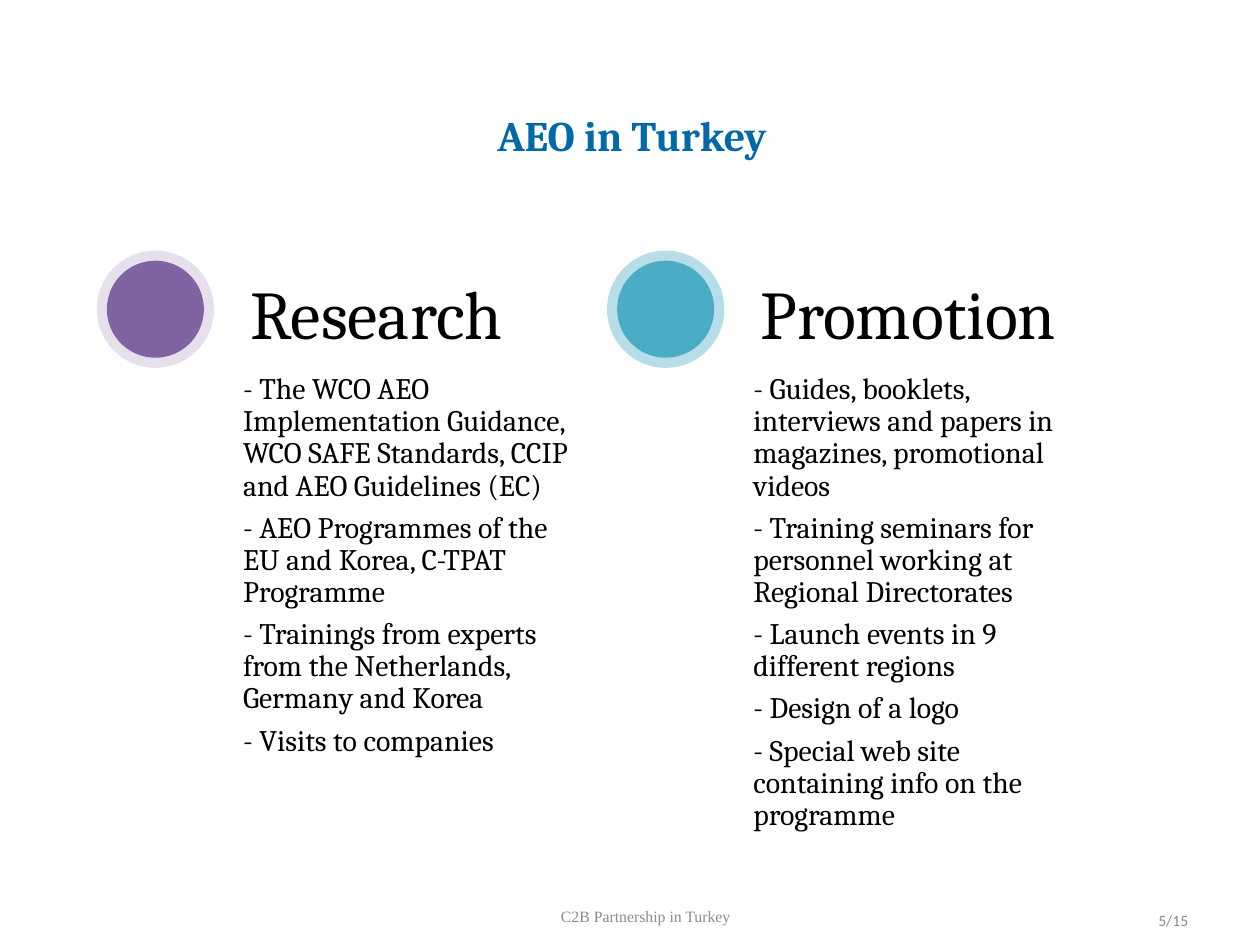
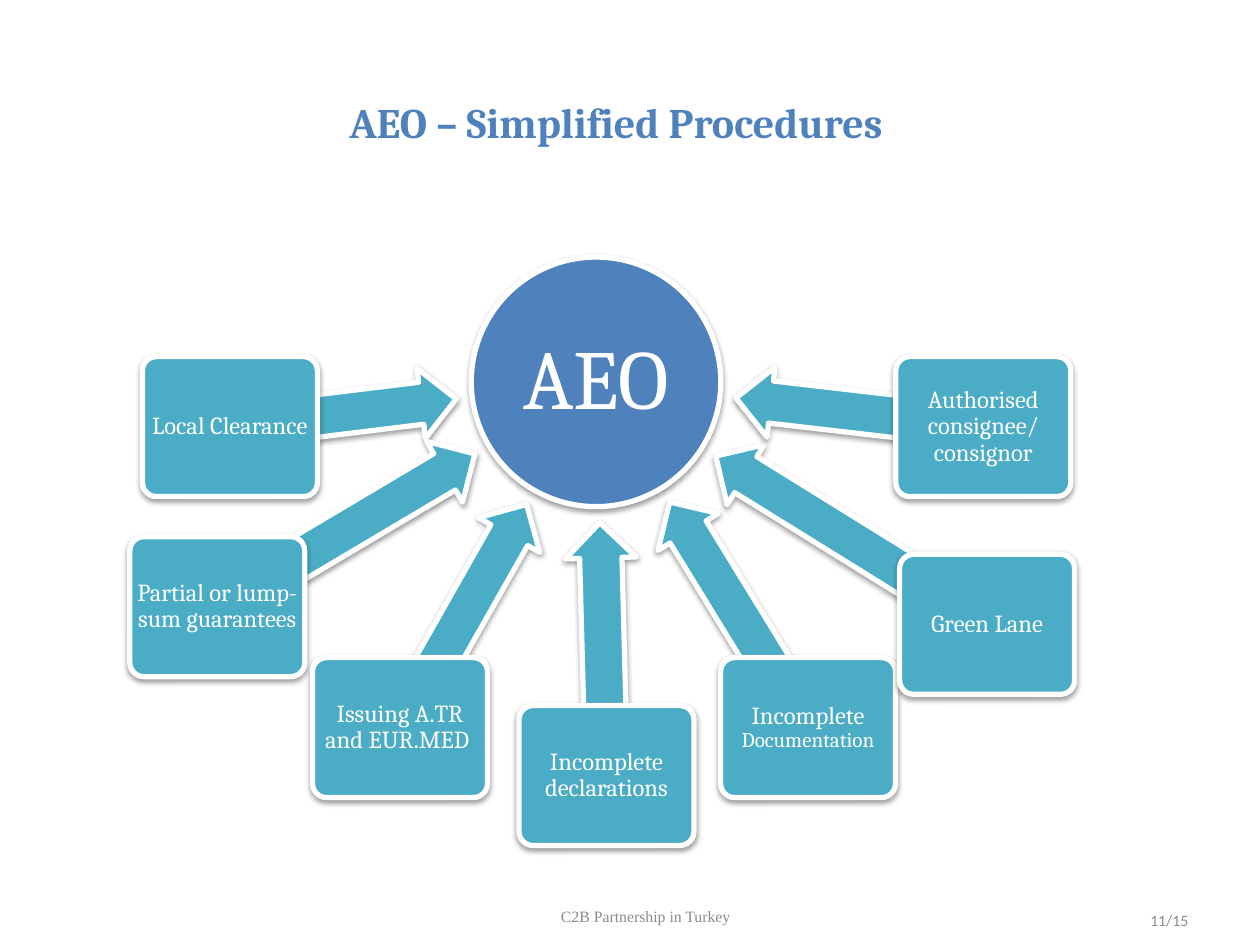
import math
from dataclasses import dataclass

import lxml.etree
import pptx
import pptx.dml.color
import pptx.enum.shapes
import pptx.enum.text
import pptx.oxml.ns
import pptx.util

Pt = pptx.util.Pt
Shape = pptx.enum.shapes.MSO_SHAPE
Align = pptx.enum.text.PP_ALIGN
Anchor = pptx.enum.text.MSO_ANCHOR


@dataclass(frozen=True)
class Theme:
    serif: str = "Cambria"
    footer_font: str = "Times New Roman"
    number_font: str = "Calibri"
    title_blue: str = "0169A6"
    blue: str = "4F81BD"
    teal: str = "4BACC6"
    pale_teal: str = "B7DEE8"
    purple: str = "8064A2"
    pale_purple: str = "E6E0EC"
    black: str = "000000"
    white: str = "FFFFFF"
    grey: str = "8C8C8C"
    title_size: float = 24
    heading_size: float = 39
    body_size: float = 17
    hub_size: float = 48
    box_size: float = 14
    small_box_size: float = 12
    footer_size: float = 9


THEME = Theme()
PAGE_COUNT = 15

# Research and promotion columns
COLUMN_LEFT, COLUMN_PITCH, COLUMN_TOP = 55.3, 291.6, 143.2
HALO, DOT = 67, 53.4
COLUMN_TEXT_OFFSET, COLUMN_TEXT_WIDTH, COLUMN_TEXT_HEIGHT = 80, 197.3, 280
COLUMNS = [
    ("Research", THEME.purple, THEME.pale_purple, [
        "- The WCO AEO Implementation Guidance, WCO SAFE Standards, CCIP and AEO Guidelines (EC)",
        "- AEO Programmes of the EU and Korea, C-TPAT Programme",
        "- Trainings from experts from the Netherlands, Germany and Korea",
        "- Visits to companies",
    ]),
    ("Promotion", THEME.teal, THEME.pale_teal, [
        "- Guides, booklets, interviews and papers in magazines, promotional videos",
        "- Training seminars for personnel working at Regional Directorates",
        "- Launch events in 9 different regions",
        "- Design of a logo",
        "- Special web site containing info on the programme",
    ]),
]

# Procedures around the hub: left and top of each box, then its runs
HUB_X, HUB_Y, HUB_DIAMETER = 340.6, 218.2, 142.6
BOX_WIDTH, BOX_HEIGHT = 100, 80
ARROW_THICKNESS, ARROW_TIP_DISTANCE = 40.3, 80.5
PROCEDURES = [
    (81.4, 203.8, [("Local Clearance", THEME.box_size)]),
    (74.2, 306.7, [("Partial or lump-sum guarantees", THEME.box_size)]),
    (178.6, 375.8, [("Issuing A.TR and EUR.MED ", THEME.box_size)]),
    (296.6, 403.2, [("Incomplete declarations", THEME.box_size)]),
    (411.8, 375.8, [("Incomplete ", THEME.box_size),
                    ("Documentation", THEME.small_box_size)]),
    (514.1, 316.8, [("Green Lane", THEME.box_size)]),
    (511.9, 203.8, [("Authorised consignee/ consignor", THEME.box_size)]),
]


def rgb(color):
    return pptx.dml.color.RGBColor.from_string(color)


def write_text(shape, paragraphs, color, font=THEME.serif, bold=False, align=Align.LEFT,
               anchor=Anchor.TOP, insets=(0, 0), line_spacing=1, gap=0):
    """Fill a shape with paragraphs, each a list of (text, size) runs."""
    frame = shape.text_frame
    frame.word_wrap = True
    frame.vertical_anchor = anchor
    frame.margin_left = frame.margin_right = Pt(insets[0])
    frame.margin_top = frame.margin_bottom = Pt(insets[1])
    for index, runs in enumerate(paragraphs):
        paragraph = frame.paragraphs[0] if index == 0 else frame.add_paragraph()
        paragraph.alignment = align
        paragraph.line_spacing = line_spacing
        paragraph.space_before = Pt(gap if index else 0)
        for text, size in runs:
            run = paragraph.add_run()
            run.text = text
            run.font.name = font
            run.font.size = Pt(size)
            run.font.bold = bold
            run.font.color.rgb = rgb(color)


def add_text(slide, left, top, width, height, paragraphs, color, **style):
    box = slide.shapes.add_textbox(Pt(left), Pt(top), Pt(width), Pt(height))
    write_text(box, paragraphs, color, **style)


def add_centred_shape(slide, preset, x, y, width, height, fill, line=None, line_width=2):
    """Add a preset shape around the centre point x, y."""
    shape = slide.shapes.add_shape(preset, Pt(x - width / 2), Pt(y - height / 2),
                                   Pt(width), Pt(height))
    shape.shadow.inherit = False
    shape.fill.solid()
    shape.fill.fore_color.rgb = rgb(fill)
    if line:
        shape.line.color.rgb = rgb(line)
        shape.line.width = Pt(line_width)
    else:
        shape.line.fill.background()
    return shape


def add_raised_shape(slide, preset, x, y, width, height, fill):
    """Add a white-edged shape with a soft shadow below it."""
    shape = add_centred_shape(slide, preset, x, y, width, height, fill, THEME.white, 3)
    qualified = pptx.oxml.ns.qn
    effects = shape.element.spPr.find(qualified("a:effectLst"))
    shadow = lxml.etree.SubElement(effects, qualified("a:outerShdw"), blurRad="40000",
                                   dist="20000", dir="5400000", rotWithShape="0")
    color = lxml.etree.SubElement(shadow, qualified("a:srgbClr"), val=THEME.black)
    lxml.etree.SubElement(color, qualified("a:alpha"), val="38000")
    return shape


def add_slide(presentation, page):
    """Add a blank slide with the shared footer and page number."""
    slide = presentation.slides.add_slide(presentation.slide_layouts[6])
    footer_style = dict(color=THEME.grey, anchor=Anchor.MIDDLE, insets=(5, 3))
    add_text(slide, 246.2, 509, 245.5, 28.8,
             [[("C2B Partnership in Turkey", THEME.footer_size)]],
             font=THEME.footer_font, align=Align.CENTER, **footer_style)
    add_text(slide, 516.2, 511.2, 167.8, 28.8,
             [[(f"{page}/{PAGE_COUNT}", THEME.footer_size)]],
             font=THEME.number_font, align=Align.RIGHT, **footer_style)
    return slide


def add_title(slide, text, left, top, width, height, color):
    add_text(slide, left, top, width, height, [[(text, THEME.title_size)]], color,
             bold=True, align=Align.CENTER, insets=(7.2, 3.6))


def add_column(slide, left, heading, color, halo_color, items):
    x, y = left + HALO / 2, COLUMN_TOP + HALO / 2
    add_centred_shape(slide, Shape.OVAL, x, y, HALO, HALO, halo_color)
    add_centred_shape(slide, Shape.OVAL, x, y, DOT, DOT, color, color)
    text_left = left + COLUMN_TEXT_OFFSET
    add_text(slide, text_left, COLUMN_TOP + HALO, COLUMN_TEXT_WIDTH, COLUMN_TEXT_HEIGHT,
             [[(item, THEME.body_size)] for item in items], THEME.black,
             insets=(3.6, 3.6), line_spacing=0.9, gap=5.7)
    add_text(slide, text_left, COLUMN_TOP, COLUMN_TEXT_WIDTH, HALO,
             [[(heading, THEME.heading_size)]], THEME.black,
             anchor=Anchor.BOTTOM, insets=(7.8, 7.8), line_spacing=0.9)


def write_label(shape, runs):
    write_text(shape, [runs], THEME.white, align=Align.CENTER, anchor=Anchor.MIDDLE,
               line_spacing=0.9)


def add_procedure(slide, left, top, runs):
    """Add a box and the arrow that runs from its centre towards the hub."""
    x, y = left + BOX_WIDTH / 2, top + BOX_HEIGHT / 2
    angle = math.atan2(y - HUB_Y, x - HUB_X)
    distance = math.hypot(x - HUB_X, y - HUB_Y)
    middle = (distance + ARROW_TIP_DISTANCE) / 2
    arrow = add_raised_shape(slide, Shape.LEFT_ARROW, HUB_X + middle * math.cos(angle),
                             HUB_Y + middle * math.sin(angle),
                             distance - ARROW_TIP_DISTANCE, ARROW_THICKNESS, THEME.teal)
    arrow.adjustments[0] = 0.6
    arrow.adjustments[1] = 0.5
    arrow.rotation = math.degrees(angle)
    box = add_raised_shape(slide, Shape.ROUNDED_RECTANGLE, x, y, BOX_WIDTH, BOX_HEIGHT,
                           THEME.teal)
    box.adjustments[0] = 0.1
    write_label(box, runs)


def add_turkey_slide(presentation):
    slide = add_slide(presentation, 5)
    add_title(slide, "AEO in Turkey", 160.6, 59, 401, 59, THEME.title_blue)
    for index, column in enumerate(COLUMNS):
        add_column(slide, COLUMN_LEFT + index * COLUMN_PITCH, *column)


def add_procedures_slide(presentation):
    slide = add_slide(presentation, 11)
    add_title(slide, "AEO – Simplified Procedures", 134.6, 51.8, 434.9, 31.7, THEME.blue)
    hub = add_raised_shape(slide, Shape.OVAL, HUB_X, HUB_Y, HUB_DIAMETER, HUB_DIAMETER,
                           THEME.blue)
    write_label(hub, [("AEO", THEME.hub_size)])
    for procedure in PROCEDURES:
        add_procedure(slide, *procedure)


def main():
    presentation = pptx.Presentation()
    presentation.slide_width = Pt(720)
    presentation.slide_height = Pt(540)
    add_turkey_slide(presentation)
    add_procedures_slide(presentation)
    presentation.save("out.pptx")


if __name__ == "__main__":
    main()
